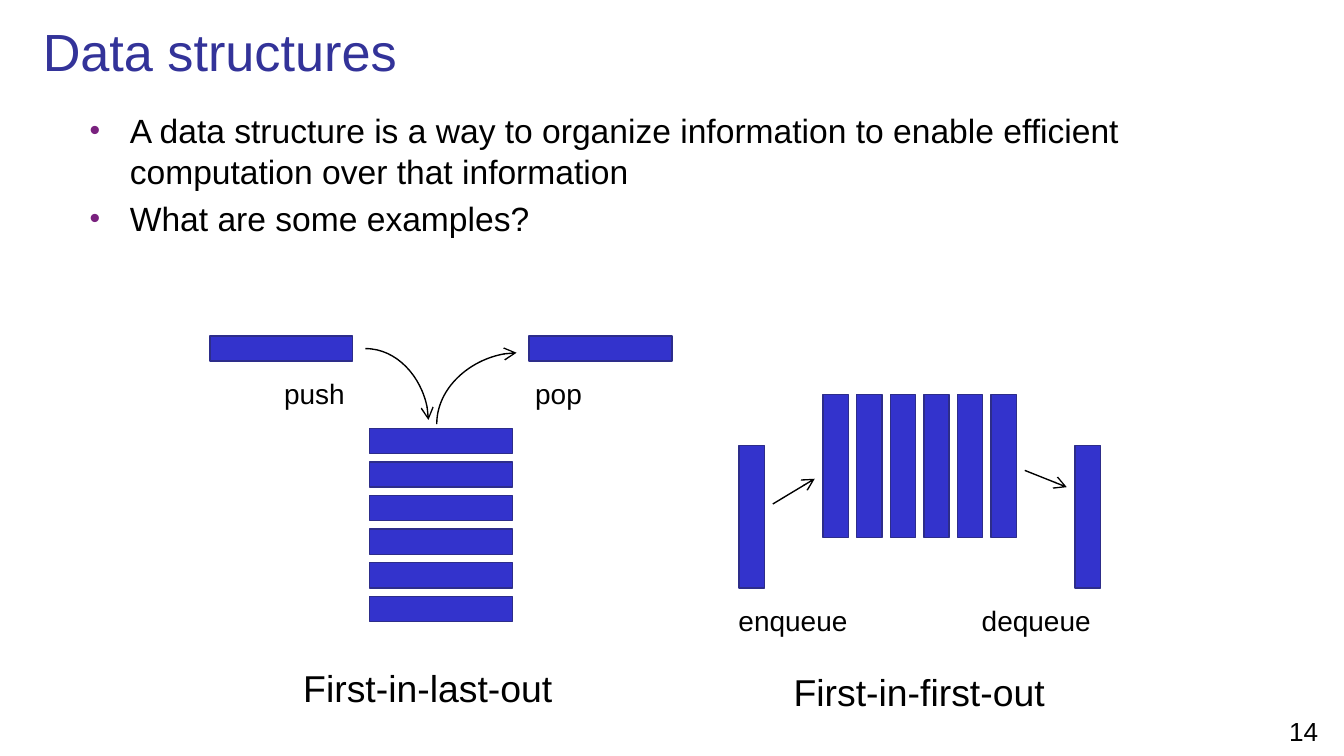
import pptx
import pptx.dml.color
import pptx.enum.shapes
import pptx.enum.text
import pptx.oxml
import pptx.oxml.ns
import pptx.util
import lxml.etree

Pt = pptx.util.Pt
RGBColor = pptx.dml.color.RGBColor
ALIGN = pptx.enum.text.PP_ALIGN
ANCHOR = pptx.enum.text.MSO_ANCHOR
CONNECTOR = pptx.enum.shapes.MSO_CONNECTOR
qn = pptx.oxml.ns.qn

BLACK = RGBColor(0x00, 0x00, 0x00)
TITLE_BLUE = RGBColor(0x33, 0x33, 0x99)
BAR_BLUE = RGBColor(0x33, 0x33, 0xCC)
BAR_EDGE = RGBColor(0x2D, 0x2D, 0x8A)
BULLET_PURPLE = RGBColor(0x79, 0x21, 0x7E)

LONG, SHORT, STEP = 76.5, 13.5, 18

deck = pptx.Presentation()
deck.slide_width, deck.slide_height = Pt(720), Pt(405)
slide = deck.slides.add_slide(deck.slide_layouts[6])


def add_text(place, lines, size, color=BLACK, **frame_format):
    """Add a text box with one paragraph per line and return its text frame."""
    box = slide.shapes.add_textbox(*map(Pt, place))
    frame = box.text_frame
    for name, value in frame_format.items():
        setattr(frame, name, value)
    for index, line in enumerate(lines):
        para = frame.paragraphs[0] if index == 0 else frame.add_paragraph()
        span = para.add_run()
        span.text = line
        span.font.color.rgb = color
        for name, value in {"name": "Arial", "size": Pt(size)}.items():
            setattr(span.font, name, value)
    return frame


def add_arrow(kind, start, end):
    arrow = slide.shapes.add_connector(kind, *map(Pt, start + end))
    arrow.line.color.rgb = BLACK
    arrow.line.width = Pt(0.75)
    lxml.etree.SubElement(arrow.line._get_or_add_ln(), qn("a:tailEnd"), type="arrow")
    properties = arrow._element.spPr
    lxml.etree.SubElement(properties, qn("a:effectLst"))
    return properties


# Title, bullets and page number
add_text((15.84, 5.76, 701.28, 42.48), ["Data structures"], 28, TITLE_BLUE,
         word_wrap=True, vertical_anchor=ANCHOR.MIDDLE)

bullets = add_text((31.5, 55.5, 659.5, 315), [
    "A data structure is a way to organize information to enable efficient "
    "computation over that information",
    "What are some examples?",
], 18, word_wrap=True)
for para in bullets.paragraphs:
    para.space_before = Pt(3.6)
    properties = para._p.get_or_add_pPr()
    properties.set("marL", str(Pt(31)))
    properties.set("indent", str(Pt(-21.6)))
    color = lxml.etree.SubElement(properties, qn("a:buClr"))
    lxml.etree.SubElement(color, qn("a:srgbClr"), val=str(BULLET_PURPLE))
    lxml.etree.SubElement(properties, qn("a:buSzPct"), val="90000")
    lxml.etree.SubElement(properties, qn("a:buFont"), typeface="Arial")
    lxml.etree.SubElement(properties, qn("a:buChar"), char="•")

page_number = add_text((676.8, 379.5, 43.2, 21.6), ["14"], 14, word_wrap=True)
page_number.paragraphs[0].alignment = ALIGN.CENTER

# Stack and queue bars, each with one item entering and one leaving
stack_bars = [(198, 229.5 + STEP * row) for row in range(6)] + [(112.5, 180), (283.5, 180)]
queue_bars = [(441 + STEP * column, 211.5) for column in range(6)] + [(396, 238.5), (576, 238.5)]
for bars, width, height in ((stack_bars, LONG, SHORT), (queue_bars, SHORT, LONG)):
    for left, top in bars:
        bar = slide.shapes.add_shape(pptx.enum.shapes.MSO_SHAPE.RECTANGLE,
                                     *map(Pt, (left, top, width, height)))
        bar.shadow.inherit = False
        bar.fill.solid()
        bar.fill.fore_color.rgb = BAR_BLUE
        bar.line.color.rgb = BAR_EDGE
        bar.line.width = Pt(0.75)

# Arrows
add_arrow(CONNECTOR.STRAIGHT, (414, 270), (436.5, 256.5))
add_arrow(CONNECTOR.STRAIGHT, (549, 252), (571.5, 261))
push_curve = add_arrow(CONNECTOR.CURVE, (195.75, 186.75), (229.5, 225))
# The pop curve is placed unrotated, then turned a quarter to leave upwards
pop_curve = add_arrow(CONNECTOR.CURVE, (274.5, 229.5), (236.25, 186.75))
pop_curve.find(qn("a:xfrm")).set("rot", "5400000")
for curve in (push_curve, pop_curve):
    curve.find(qn("a:prstGeom")).set("prst", "curvedConnector2")

# Labels
labels = [
    ("push", 15, (144.7, 198, 47.5, 25.2)),
    ("pop", 15, (279.4, 198, 39.6, 25.2)),
    ("enqueue", 15, (388.1, 319.7, 73.4, 25.2)),
    ("dequeue", 15, (518.4, 319.7, 73.4, 25.2)),
    ("First-in-last-out", 20, (154.8, 352.8, 149, 31.7)),
    ("First-in-first-out", 20, (417.6, 355, 149.8, 31.7)),
]
for text, size, place in labels:
    label = add_text(place, [text], size, word_wrap=False)
    label.paragraphs[0].alignment = ALIGN.CENTER

deck.save("out.pptx")
